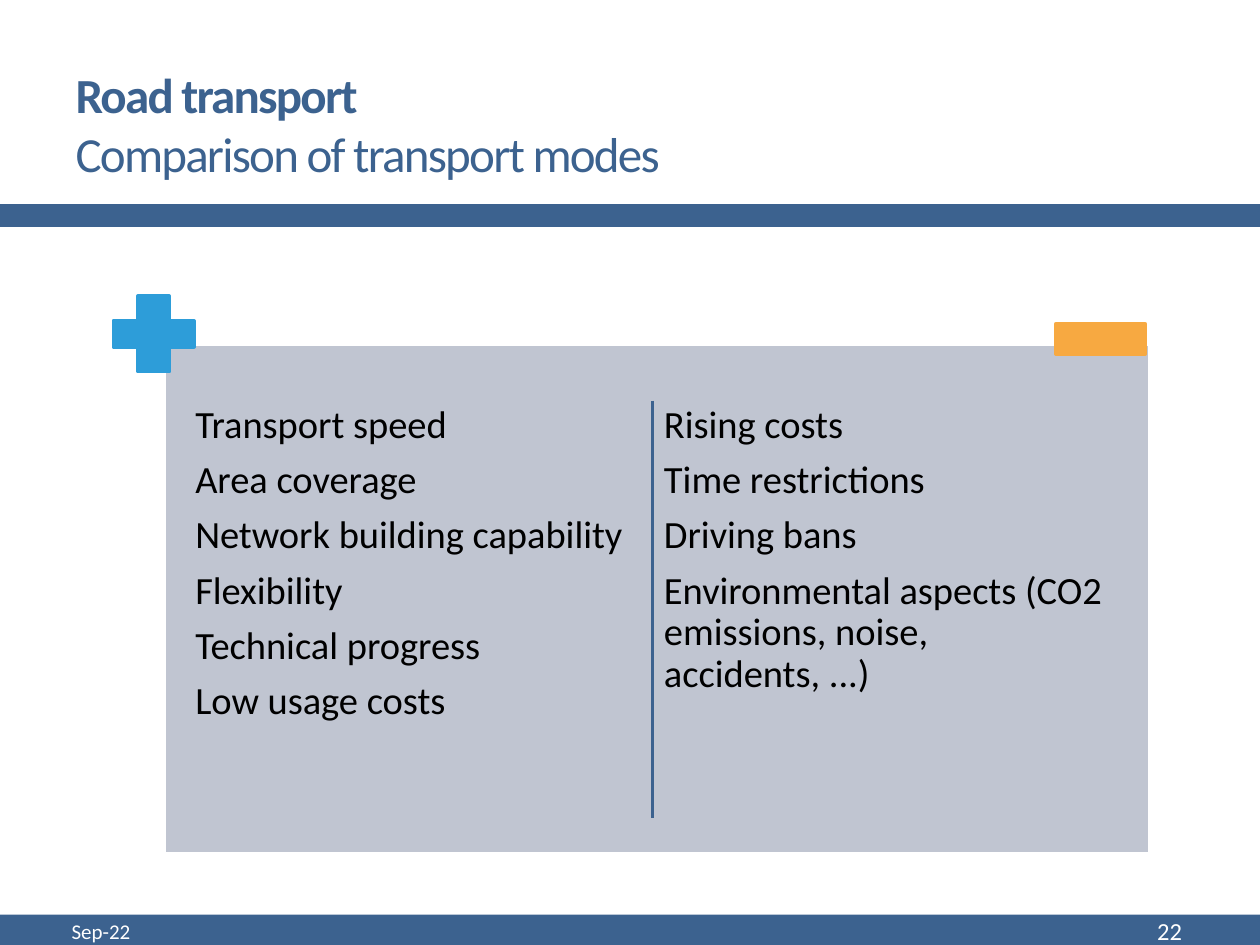
from lxml.etree import SubElement
from pptx import Presentation
from pptx.dml.color import RGBColor
from pptx.enum.shapes import MSO_CONNECTOR, MSO_SHAPE
from pptx.enum.text import MSO_ANCHOR, MSO_AUTO_SIZE, PP_ALIGN
from pptx.oxml.ns import qn
from pptx.util import Inches, Pt

# Content
TITLE, SUBTITLE = "Road transport", "Comparison of transport modes"
PROS = ["Transport speed", "Area coverage", "Network building capability",
        "Flexibility", "Technical progress", "Low usage costs"]
CONS = ["Rising costs", "Time restrictions", "Driving bans",
        "Environmental aspects (CO2 emissions, noise, accidents, ...)"]
DATE, PAGE = "Sep-22", "22"

COLORS = {"navy": "3C628F", "panel": "C0C5D1", "plus": "2D9DD9",
          "minus": "F7A941", "white": "FFFFFF", "black": "000000"}
FONT = "Calibri"
WIDTH, HEIGHT = 10, 7.5
FOOTER_TOP = 7.26
LINE_WIDTH = Pt(2.08)

# Two equal columns on either side of the divider
DIVIDER_X, COLUMN_WIDTH, COLUMN_GAP = 5.18, 3.64, 0.08
COLUMN_TOP, COLUMN_HEIGHT = 3.17, 3.46
FIRST_COLUMN = DIVIDER_X - COLUMN_GAP / 2 - COLUMN_WIDTH
COLUMNS = [(FIRST_COLUMN, PROS),
           (FIRST_COLUMN + COLUMN_WIDTH + COLUMN_GAP, CONS)]


def rgb(name):
    return RGBColor.from_string(COLORS[name])


def box(left, top, width, height):
    return [Inches(value) for value in (left, top, width, height)]


def style_font(font, size, color, bold=False):
    font.name, font.size, font.bold = FONT, Pt(size), bold
    font.color.rgb = rgb(color)


def add_shape(slide, kind, area, fill, line=None):
    shape = slide.shapes.add_shape(kind, *box(*area))
    shape.shadow.inherit = False
    shape.fill.solid()
    shape.fill.fore_color.rgb = rgb(fill)
    if line:
        shape.line.color.rgb = rgb(line)
        shape.line.width = LINE_WIDTH
    else:
        shape.line.fill.background()
    return shape


def add_text(slide, lines, area, size=12, color="black", align=PP_ALIGN.LEFT,
             anchor=MSO_ANCHOR.TOP, inset=None, spacing=None, after=0):
    frame = slide.shapes.add_textbox(*box(*area)).text_frame
    frame.word_wrap = True
    frame.vertical_anchor = anchor
    if inset is not None:
        frame.margin_left = frame.margin_right = Inches(inset)
        frame.margin_top = frame.margin_bottom = Inches(inset)
    frame.text = "\n".join(lines)
    for paragraph in frame.paragraphs:
        paragraph.alignment = align
        paragraph.line_spacing = spacing
        paragraph.space_after = Pt(after)
        style_font(paragraph.runs[0].font, size, color)


def fill_title(title):
    title.left, title.top, title.width, title.height = box(0.5, 0.44, 9, 1.08)
    frame = title.text_frame
    frame.word_wrap = True
    frame.auto_size = MSO_AUTO_SIZE.NONE
    frame.vertical_anchor = MSO_ANCHOR.MIDDLE
    heading = frame.paragraphs[0]
    heading.alignment = PP_ALIGN.LEFT
    heading.text = f"{TITLE}\v{SUBTITLE}"
    for run, bold in zip(heading.runs, (True, False)):
        style_font(run.font, 28, "navy", bold)
        run.font._element.set("spc", "-100")


def add_divider(slide):
    divider = slide.shapes.add_connector(
        MSO_CONNECTOR.STRAIGHT, Inches(DIVIDER_X), Inches(3.18),
        Inches(DIVIDER_X), Inches(6.49))
    divider.line.color.rgb = rgb("navy")
    divider.line.width = LINE_WIDTH
    SubElement(divider._element.spPr, qn("a:effectLst"))


def main():
    deck = Presentation()
    deck.slide_width, deck.slide_height = Inches(WIDTH), Inches(HEIGHT)
    slide = deck.slides.add_slide(deck.slide_layouts[5])

    # Title and the bars under it and at the foot
    fill_title(slide.shapes.title)
    for top, height in ((1.62, 0.18), (FOOTER_TOP, HEIGHT - FOOTER_TOP)):
        add_shape(slide, MSO_SHAPE.RECTANGLE, (0, top, WIDTH, height), "navy")

    # Panel with advantages and drawbacks
    add_shape(slide, MSO_SHAPE.RECTANGLE, (1.3, 2.73, 7.83, 4.05),
              "panel", line="white")
    for left, points in COLUMNS:
        add_text(slide, points,
                 (left, COLUMN_TOP, COLUMN_WIDTH, COLUMN_HEIGHT),
                 size=22, inset=0.05, spacing=0.9, after=7.7)

    # Plus and minus signs, divider
    plus = add_shape(slide, MSO_SHAPE.CROSS, (0.9, 2.35, 0.64, 0.6),
                     "plus", line="plus")
    plus.adjustments[0] = 0.328
    add_shape(slide, MSO_SHAPE.RECTANGLE, (8.38, 2.57, 0.71, 0.24),
              "minus", line="minus")
    add_divider(slide)

    # Footer
    for text, left, width, size, align in (
            (DATE, 0.47, 3.17, 12, PP_ALIGN.LEFT),
            (PAGE, 8.31, 1.17, 14, PP_ALIGN.RIGHT)):
        add_text(slide, [text], (left, 7.21, width, 0.36), size=size,
                 color="white", align=align, anchor=MSO_ANCHOR.MIDDLE)

    deck.save("out.pptx")


if __name__ == "__main__":
    main()
